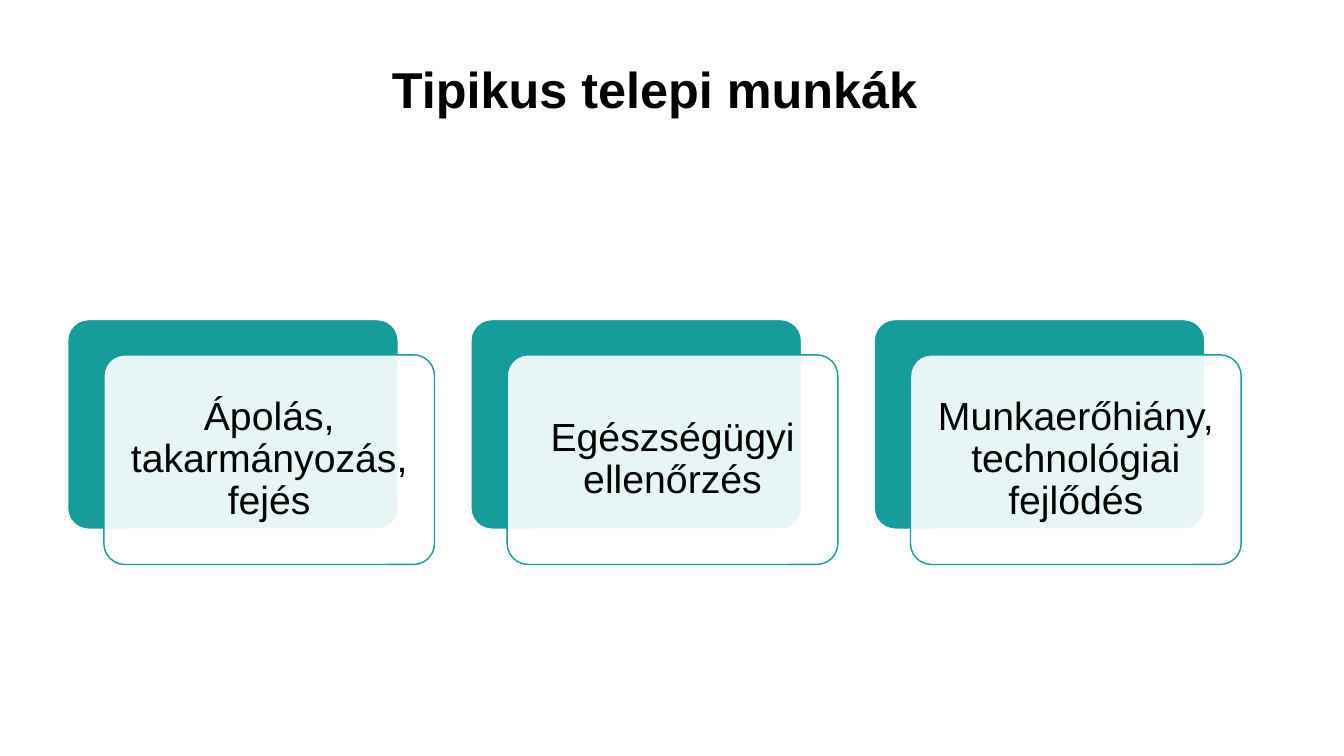
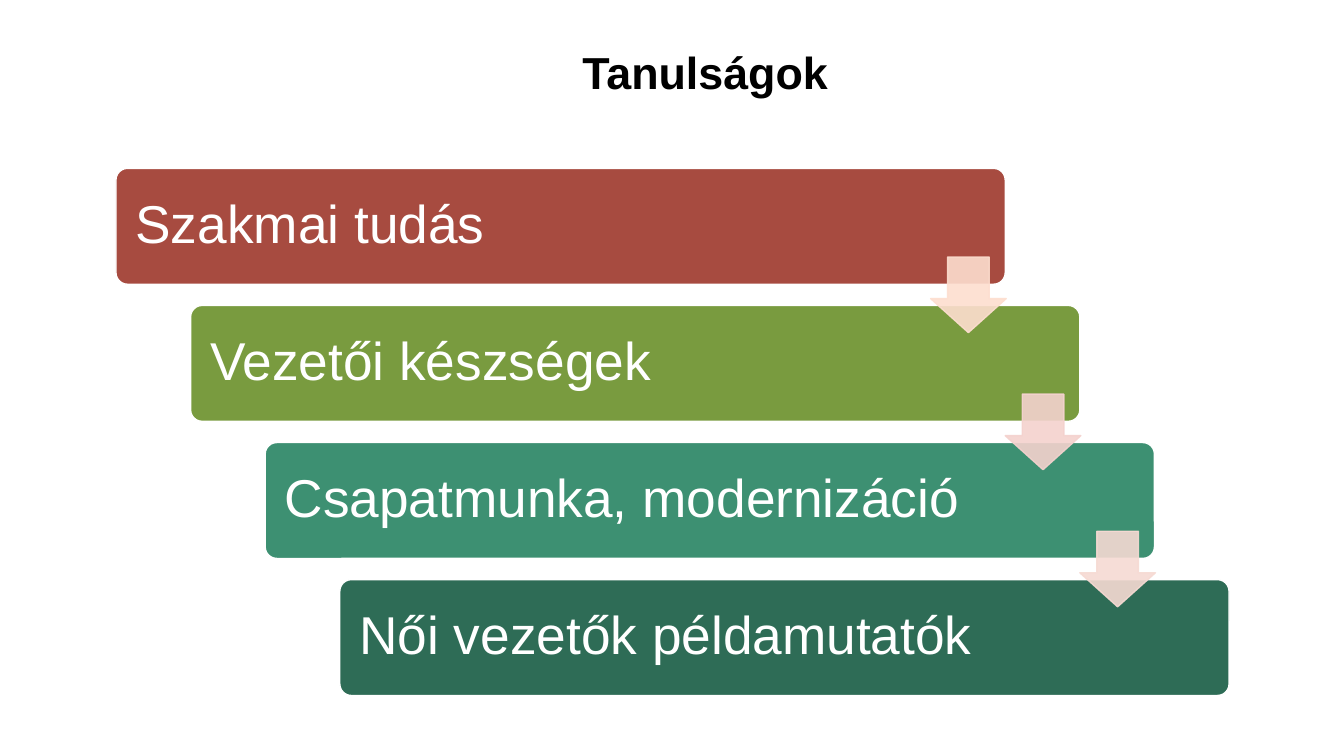
from dataclasses import dataclass

import lxml.etree
import pptx
import pptx.dml.color
import pptx.enum.shapes
import pptx.enum.text
import pptx.oxml.ns
import pptx.util

Inches = pptx.util.Inches
Shapes = pptx.enum.shapes.MSO_SHAPE
Align = pptx.enum.text.PP_ALIGN
Anchor = pptx.enum.text.MSO_ANCHOR
qn = pptx.oxml.ns.qn


@dataclass(frozen=True)
class Theme:
    font: str = "Arial"
    black: str = "000000"
    white: str = "FFFFFF"
    teal: str = "169C9A"
    bars: tuple = ("A74B40", "799B3F", "3D9072", "2E6C56")
    arrows: tuple = ("FDDECF", "F4D2CE", "F6DAD3")
    title_size: int = 36
    small_title_size: int = 32
    card_size: int = 28
    bar_size: int = 38
    line_width: int = 1
    line_spacing: float = 0.9
    opacity: int = 90


class Deck:
    def __init__(self, theme):
        self.theme = theme
        self.presentation = pptx.Presentation()
        self.presentation.slide_width = Inches(13.33)
        self.presentation.slide_height = Inches(7.5)
        self.slide = None

    def add_slide(self):
        layout = self.presentation.slide_layouts[6]
        self.slide = self.presentation.slides.add_slide(layout)

    def set_text(self, shape, text, size, color, align, inset=None):
        frame = shape.text_frame
        frame.text = text
        frame.word_wrap = True
        if inset is not None:
            frame.vertical_anchor = Anchor.MIDDLE
            frame.margin_left = frame.margin_right = Inches(inset)
            frame.margin_top = frame.margin_bottom = Inches(inset)
        paragraph = frame.paragraphs[0]
        paragraph.alignment = align
        paragraph.line_spacing = self.theme.line_spacing
        font = paragraph.runs[0].font
        font.name = self.theme.font
        font.size = pptx.util.Pt(size)
        font.color.rgb = pptx.dml.color.RGBColor.from_string(color)
        return font

    def title(self, text, left, top, width, height, size):
        box = self.slide.shapes.add_textbox(
            Inches(left), Inches(top), Inches(width), Inches(height))
        font = self.set_text(box, text, size, self.theme.black, Align.CENTER)
        font.bold = True

    def make_translucent(self, parent):
        color = parent.find(qn("a:solidFill")).find(qn("a:srgbClr"))
        alpha = lxml.etree.SubElement(color, qn("a:alpha"))
        alpha.set("val", str(self.theme.opacity * 1000))

    def shape(self, kind, left, top, width, height, fill, line, adjustments):
        shape = self.slide.shapes.add_shape(
            kind, Inches(left), Inches(top), Inches(width), Inches(height))
        shape.shadow.inherit = False
        for index, value in enumerate(adjustments):
            shape.adjustments[index] = value
        shape.fill.solid()
        shape.fill.fore_color.rgb = pptx.dml.color.RGBColor.from_string(fill)
        shape.line.color.rgb = pptx.dml.color.RGBColor.from_string(line)
        shape.line.width = pptx.util.Pt(self.theme.line_width)
        return shape

    def panel(self, left, top, width, height, fill, line):
        return self.shape(Shapes.ROUNDED_RECTANGLE, left, top, width, height,
                          fill, line, [0.1])

    def card(self, text, left, top):
        theme = self.theme
        width, height, offset = 3.28, 2.08, 0.36
        self.panel(left, top, width, height, theme.teal, theme.white)
        front = self.panel(left + offset, top + offset - 0.01, width, height,
                           theme.white, theme.teal)
        self.make_translucent(front.element.spPr)
        self.set_text(front, text, theme.card_size, theme.black,
                      Align.CENTER, 0.12)

    def bar(self, text, left, top, color):
        theme = self.theme
        bar = self.panel(left, top, 8.82, 1.15, color, theme.white)
        self.set_text(bar, text, theme.bar_size, theme.white, Align.LEFT, 0.16)

    def arrow(self, left, top, color):
        arrow = self.shape(Shapes.DOWN_ARROW, left, top, 0.75, 0.75,
                           color, color, [0.55, 0.45])
        properties = arrow.element.spPr
        self.make_translucent(properties)
        self.make_translucent(properties.find(qn("a:ln")))


def build_farm_work(deck):
    deck.add_slide()
    deck.title("Tipikus telepi munkák", 0.67, 0.6, 11.65, 1.24,
               deck.theme.title_size)
    tasks = ("Ápolás, takarmányozás, fejés", "Egészségügyi ellenőrzés",
             "Munkaerőhiány, technológiai fejlődés")
    for index, task in enumerate(tasks):
        deck.card(task, 0.67 + 4 * index, 3.17)


def build_lessons(deck):
    deck.add_slide()
    deck.title("Tanulságok", 4.74, 0.45, 4.51, 1.22,
               deck.theme.small_title_size)
    lessons = ("Szakmai tudás", "Vezetői készségek",
               "Csapatmunka, modernizáció", "Női vezetők példamutatók")
    step_x, step_y = 0.74, 1.36
    for index, (lesson, color) in enumerate(zip(lessons, deck.theme.bars)):
        deck.bar(lesson, 1.15 + step_x * index, 1.67 + step_y * index, color)
    for index, color in enumerate(deck.theme.arrows):
        deck.arrow(9.23 + step_x * index, 2.55 + step_y * index, color)


def main():
    deck = Deck(Theme())
    build_farm_work(deck)
    build_lessons(deck)
    deck.presentation.save("out.pptx")


if __name__ == "__main__":
    main()
